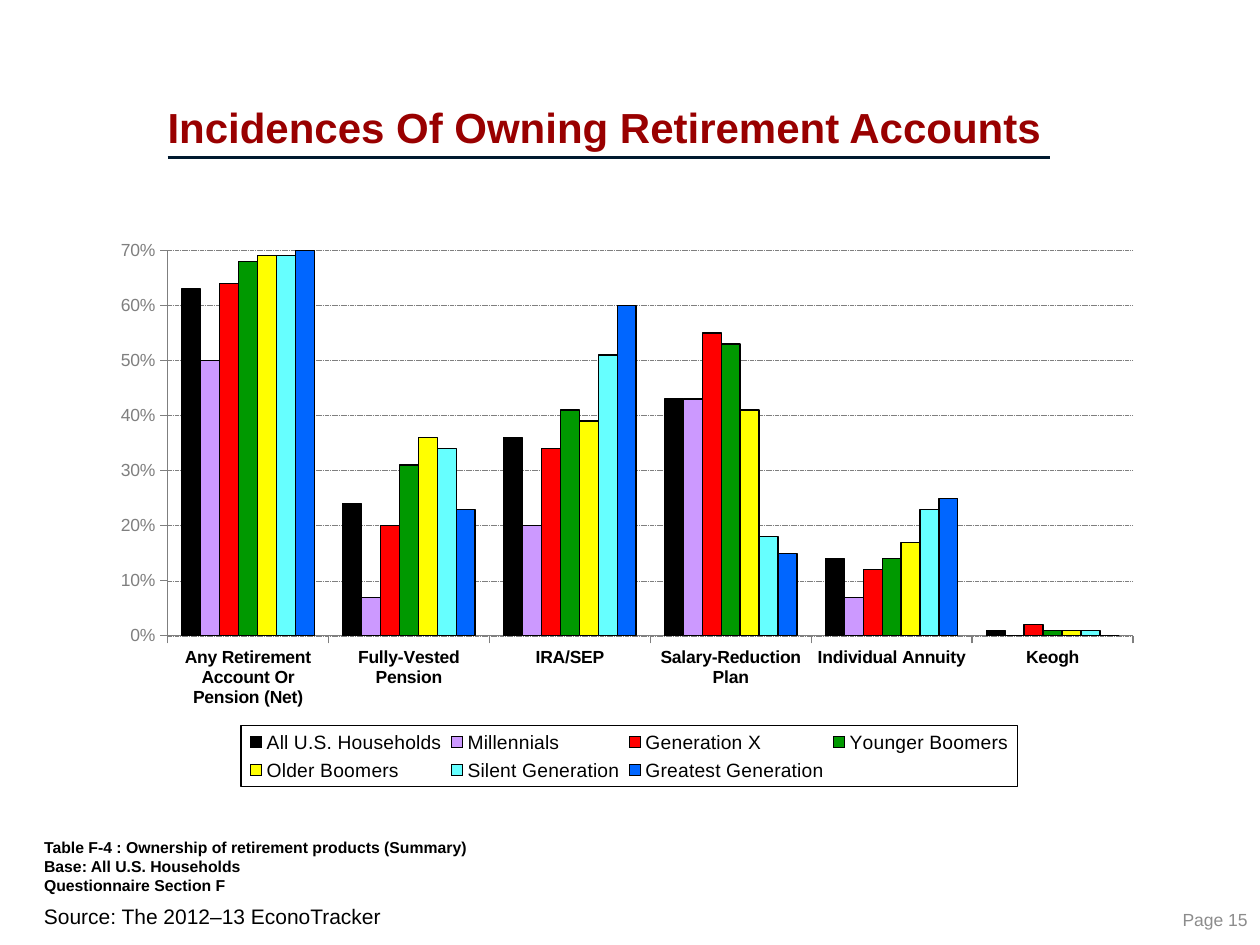
"""Build the slide on incidences of owning retirement accounts."""
from dataclasses import dataclass
from typing import Any

import lxml.etree
import pptx
import pptx.chart.data
import pptx.dml.color
import pptx.enum.chart
import pptx.enum.dml
import pptx.enum.shapes
import pptx.enum.text
import pptx.oxml
import pptx.oxml.ns
import pptx.util
from pptx.util import Inches

FONT = "Arial"
COLORS = {
    "title": "990000",
    "rule": "00192F",
    "text": "000000",
    "axis": "7F7F7F",
    "page": "8C8C8C",
}
CATEGORIES = [
    "Any Retirement Account Or Pension (Net)",
    "Fully-Vested Pension",
    "IRA/SEP",
    "Salary-Reduction Plan",
    "Individual Annuity",
    "Keogh",
]


@dataclass(frozen=True)
class Generation:
    name: str
    color: str
    shares: tuple[float, ...]


@dataclass(frozen=True)
class Note:
    lines: tuple[str, ...]
    position: tuple[float, float, float, float]
    margins: tuple[float, float, float, float]
    size: float
    color: str = "text"
    bold: bool = False
    wrap: bool = True
    anchor: Any = pptx.enum.text.MSO_ANCHOR.TOP
    alignment: Any = pptx.enum.text.PP_ALIGN.LEFT


GENERATIONS = [
    Generation("All U.S. Households", "000000", (0.63, 0.24, 0.36, 0.43, 0.14, 0.01)),
    Generation("Millennials", "CC99FF", (0.5, 0.07, 0.2, 0.43, 0.07, 0)),
    Generation("Generation X", "FF0000", (0.64, 0.2, 0.34, 0.55, 0.12, 0.02)),
    Generation("Younger Boomers", "009900", (0.68, 0.31, 0.41, 0.53, 0.14, 0.01)),
    Generation("Older Boomers", "FFFF00", (0.69, 0.36, 0.39, 0.41, 0.17, 0.01)),
    Generation("Silent Generation", "66FFFF", (0.69, 0.34, 0.51, 0.18, 0.23, 0.01)),
    Generation("Greatest Generation", "0066FF", (0.7, 0.23, 0.6, 0.15, 0.25, 0)),
]
NOTES = [
    Note(("Source: The 2012–13 EconoTracker",), (0.25, 7.12, 8.58, 0.3),
         (0.1, 0.05, 0.1, 0.05), 12),
    Note(("Page 15",), (9.26, 7.16, 0.74, 0.27), (0.1, 0.05, 0.1, 0.05), 10,
         color="page", wrap=False, anchor=pptx.enum.text.MSO_ANCHOR.MIDDLE,
         alignment=pptx.enum.text.PP_ALIGN.RIGHT),
    Note(("Table F-4 : Ownership of retirement products (Summary)",
          "Base: All U.S. Households", "Questionnaire Section F"),
         (0, 6.42, 7.02, 0.81), (0.35, 0.13, 0, 0.13), 9,
         bold=True, anchor=pptx.enum.text.MSO_ANCHOR.BOTTOM),
]


def rgb(color: str) -> pptx.dml.color.RGBColor:
    """Turn a hex string into a colour."""
    return pptx.dml.color.RGBColor.from_string(color)


def style_font(font: Any, size: float, color: str, bold: bool = False) -> None:
    """Set the face, size, colour and weight of a font."""
    font.name = FONT
    font.size = pptx.util.Pt(size)
    font.bold = bold
    font.color.rgb = rgb(color)


def style_line(line: Any, color: str, width: float) -> None:
    """Set the colour and width of a line."""
    line.color.rgb = rgb(color)
    line.width = pptx.util.Pt(width)


def set_margins(frame: Any, margins: tuple[float, float, float, float]) -> None:
    """Set the left, top, right and bottom insets of a text frame."""
    frame.margin_left, frame.margin_top, frame.margin_right, frame.margin_bottom = map(
        Inches, margins
    )


def add_title(page: Any, text: str) -> None:
    """Fill the title placeholder and underline it with a rule."""
    title = page.shapes.title
    title.left, title.top, title.width, title.height = map(Inches, (1.33, 0.08, 7.17, 1.17))
    frame = title.text_frame
    frame.text = text
    frame.word_wrap = True
    frame.vertical_anchor = pptx.enum.text.MSO_ANCHOR.BOTTOM
    set_margins(frame, (0, 0.05, 0, 0.05))
    para = frame.paragraphs[0]
    para.alignment = pptx.enum.text.PP_ALIGN.LEFT
    para.line_spacing = 0.8
    style_font(para.font, 24, COLORS["title"], bold=True)
    rule = page.shapes.add_connector(
        pptx.enum.shapes.MSO_CONNECTOR.STRAIGHT, *map(Inches, (1.33, 1.25, 8.33, 1.25))
    )
    style_line(rule.line, COLORS["rule"], 2)
    lxml.etree.SubElement(rule.element.spPr, pptx.oxml.ns.qn("a:effectLst"))


def add_note(page: Any, note: Note) -> None:
    """Draw one text box with a paragraph for each line."""
    box = page.shapes.add_textbox(*map(Inches, note.position))
    frame = box.text_frame
    frame.word_wrap = note.wrap
    frame.vertical_anchor = note.anchor
    set_margins(frame, note.margins)
    frame.text = "\n".join(note.lines)
    for para in frame.paragraphs:
        para.alignment = note.alignment
        style_font(para.font, note.size, COLORS[note.color], note.bold)


def place(parent: Any, index: int, target: str, area: tuple[float, ...]) -> None:
    """Give a chart part a manual layout in fractions of the chart."""
    for old in parent.findall(pptx.oxml.ns.qn("c:layout")):
        parent.remove(old)
    values = "".join(f'<c:{key} val="{value}"/>' for key, value in zip("xywh", area))
    inner = f'<c:layoutTarget val="{target}"/>' if target else ""
    modes = '<c:xMode val="edge"/><c:yMode val="edge"/>'
    parent.insert(index, pptx.oxml.parse_xml(
        f'<c:layout {pptx.oxml.ns.nsdecls("c")}><c:manualLayout>'
        f"{inner}{modes}{values}</c:manualLayout></c:layout>"
    ))


def style_axes(chart: Any) -> None:
    """Format both axes and the gridlines."""
    for axis, color, bold in (
        (chart.category_axis, COLORS["text"], True),
        (chart.value_axis, COLORS["axis"], False),
    ):
        style_font(axis.tick_labels.font, 10, color, bold)
        style_line(axis.format.line, COLORS["axis"], 0.75)
        axis.major_tick_mark = pptx.enum.chart.XL_TICK_MARK.OUTSIDE
    scale = chart.value_axis
    scale.minimum_scale, scale.maximum_scale, scale.major_unit = 0, 0.7, 0.1
    scale.tick_labels.number_format = "0%"
    scale.tick_labels.number_format_is_linked = False
    grid = scale.major_gridlines.format.line
    style_line(grid, COLORS["axis"], 0.25)
    grid.dash_style = pptx.enum.dml.MSO_LINE.SQUARE_DOT


def style_legend(chart: Any) -> None:
    """Put a framed legend under the plot."""
    chart.has_legend = True
    legend = chart.legend
    legend.position = pptx.enum.chart.XL_LEGEND_POSITION.BOTTOM
    legend.include_in_layout = False
    style_font(legend.font, 11, COLORS["text"])
    element = legend._element
    place(element, 1, "", (0.13, 0.89, 0.74, 0.11))
    element.find(pptx.oxml.ns.qn("c:txPr")).addprevious(pptx.oxml.parse_xml(
        f'<c:spPr {pptx.oxml.ns.nsdecls("c", "a")}><a:ln w="9525"><a:solidFill>'
        f'<a:srgbClr val="{COLORS["text"]}"/></a:solidFill></a:ln></c:spPr>'
    ))


def add_ownership_chart(page: Any) -> None:
    """Draw the clustered columns of ownership by generation."""
    data = pptx.chart.data.CategoryChartData(number_format="0%")
    data.categories = CATEGORIES
    for generation in GENERATIONS:
        data.add_series(generation.name, generation.shares)
    chart = page.shapes.add_chart(
        pptx.enum.chart.XL_CHART_TYPE.COLUMN_CLUSTERED,
        *map(Inches, (0.83, 1.81, 8.33, 4.44)), data
    ).chart
    chart.has_title = False
    style_font(chart.font, 10, COLORS["text"])
    plot = chart.plots[0]
    plot.gap_width, plot.overlap, plot.vary_by_categories = 150, 0, False
    for series, generation in zip(plot.series, GENERATIONS):
        series.format.fill.solid()
        series.format.fill.fore_color.rgb = rgb(generation.color)
        series.invert_if_negative = False
        style_line(series.format.line, COLORS["text"], 0.75)
    style_axes(chart)
    style_legend(chart)
    plot_area = chart.element.find(".//" + pptx.oxml.ns.qn("c:plotArea"))
    place(plot_area, 0, "inner", (0.06, 0.04, 0.92, 0.69))


def main() -> None:
    """Build and save the deck."""
    deck = pptx.Presentation()
    deck.slide_width, deck.slide_height = Inches(10), Inches(7.5)
    page = deck.slides.add_slide(deck.slide_layouts[5])
    add_title(page, "Incidences Of Owning Retirement Accounts")
    add_ownership_chart(page)
    for note in NOTES:
        add_note(page, note)
    deck.save("out.pptx")


if __name__ == "__main__":
    main()
